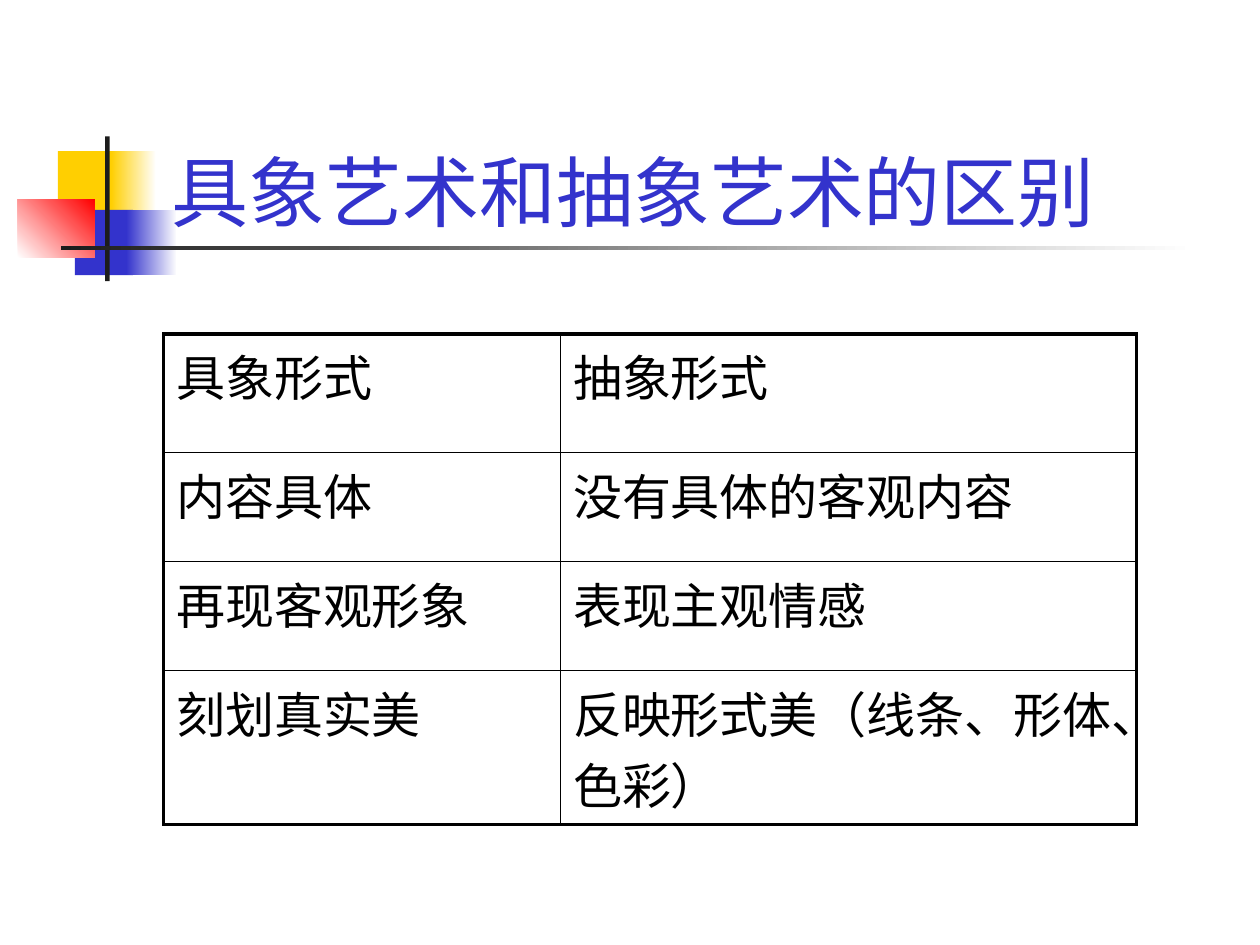
from lxml import etree
from pptx import Presentation
from pptx.dml.color import RGBColor
from pptx.enum.shapes import MSO_SHAPE
from pptx.enum.text import MSO_ANCHOR
from pptx.oxml.ns import qn
from pptx.util import Cm, Pt

RECT = MSO_SHAPE.RECTANGLE
BOTTOM = MSO_ANCHOR.BOTTOM

FONT = "Karla"
BLACK, WHITE, DARK = "000000", "FFFFFF", "1C1C1C"
YELLOW, BLUE, RED = "FFCF01", "3333CC", "FF0000"
THICK, THIN = 2.25, 1

# left, top, width, height in cm; colours (two make a gradient); angle
ORNAMENTS = [
    (1.17, 3.05, 1.22, 1.32, [YELLOW], 0),
    (2.24, 3.05, 0.91, 1.32, [YELLOW, WHITE], 0),
    (1.51, 4.23, 1.17, 1.32, [BLUE], 0),
    (2.55, 4.23, 1.02, 1.32, [BLUE, WHITE], 0),
    (0.36, 4.02, 1.55, 1.17, [WHITE, RED], 45),
    (2.12, 2.75, 0.09, 2.92, [DARK], 0),
    (1.23, 4.95, 22.86, 0.09, [DARK, WHITE], 0),
]

COLUMN_WIDTHS = [8, 11.61]
ROW_HEIGHTS = [2.39, 2.2, 2.2, 3.1]
COMPARISON = [
    ("具象形式", "抽象形式"),
    ("内容具体", "没有具体的客观内容"),
    ("再现客观形象", "表现主观情感"),
    ("刻划真实美", "反映形式美（线条、形体、色彩）"),
]


def rgb(color):
    return RGBColor.from_string(color)


def format_text(tf, size, color):
    for p in tf.paragraphs:
        for r in p.runs:
            r.font.name = FONT
            r.font.size = Pt(size)
            r.font.color.rgb = rgb(color)


def add_ornament(slide, left, top, width, height, colors, angle):
    sp = slide.shapes.add_shape(RECT, Cm(left), Cm(top), Cm(width), Cm(height))
    sp.shadow.inherit = False
    sp.line.fill.background()
    if len(colors) == 1:
        sp.fill.solid()
        sp.fill.fore_color.rgb = rgb(colors[0])
        return
    sp.fill.gradient()
    sp.fill.gradient_angle = angle
    for stop, color in zip(sp.fill.gradient_stops, colors):
        stop.color.rgb = rgb(color)


def add_title(slide, text):
    box = slide.shapes.add_textbox(Cm(3.2), Cm(1.73), Cm(21.64), Cm(3.18))
    tf = box.text_frame
    tf.word_wrap = True
    tf.vertical_anchor = BOTTOM
    tf.text = text
    format_text(tf, 44, BLUE)


def set_borders(cell, widths):
    """Draw black borders; widths are points for left, right, top, bottom."""
    tc_pr = cell._tc.get_or_add_tcPr()
    for i, (side, width) in enumerate(zip("LRTB", widths)):
        ln = etree.Element(qn(f"a:ln{side}"), w=str(Pt(width)))
        fill = etree.SubElement(ln, qn("a:solidFill"))
        etree.SubElement(fill, qn("a:srgbClr"), val=BLACK)
        tc_pr.insert(i, ln)


def add_comparison(slide):
    n_rows, n_cols = len(ROW_HEIGHTS), len(COLUMN_WIDTHS)
    table = slide.shapes.add_table(
        n_rows, n_cols, Cm(3.3), Cm(6.73),
        Cm(sum(COLUMN_WIDTHS)), Cm(sum(ROW_HEIGHTS))).table
    table.first_row = False
    table.horz_banding = False
    for column, width in zip(table.columns, COLUMN_WIDTHS):
        column.width = Cm(width)
    for i, (row, height) in enumerate(zip(table.rows, ROW_HEIGHTS)):
        row.height = Cm(height)
        for j, cell in enumerate(row.cells):
            cell.text = COMPARISON[i][j]
            cell.text_frame.paragraphs[0].space_before = Pt(5.6)
            format_text(cell.text_frame, 28, BLACK)
            cell.fill.background()
            outer = (j == 0, j == n_cols - 1, i == 0, i == n_rows - 1)
            set_borders(cell, [THICK if edge else THIN for edge in outer])


def main():
    prs = Presentation()
    prs.slide_width, prs.slide_height = Cm(25.4), Cm(19.05)
    slide = prs.slides.add_slide(prs.slide_layouts[6])
    for ornament in ORNAMENTS:
        add_ornament(slide, *ornament)
    add_title(slide, "具象艺术和抽象艺术的区别")
    add_comparison(slide)
    prs.save("out.pptx")


if __name__ == "__main__":
    main()
